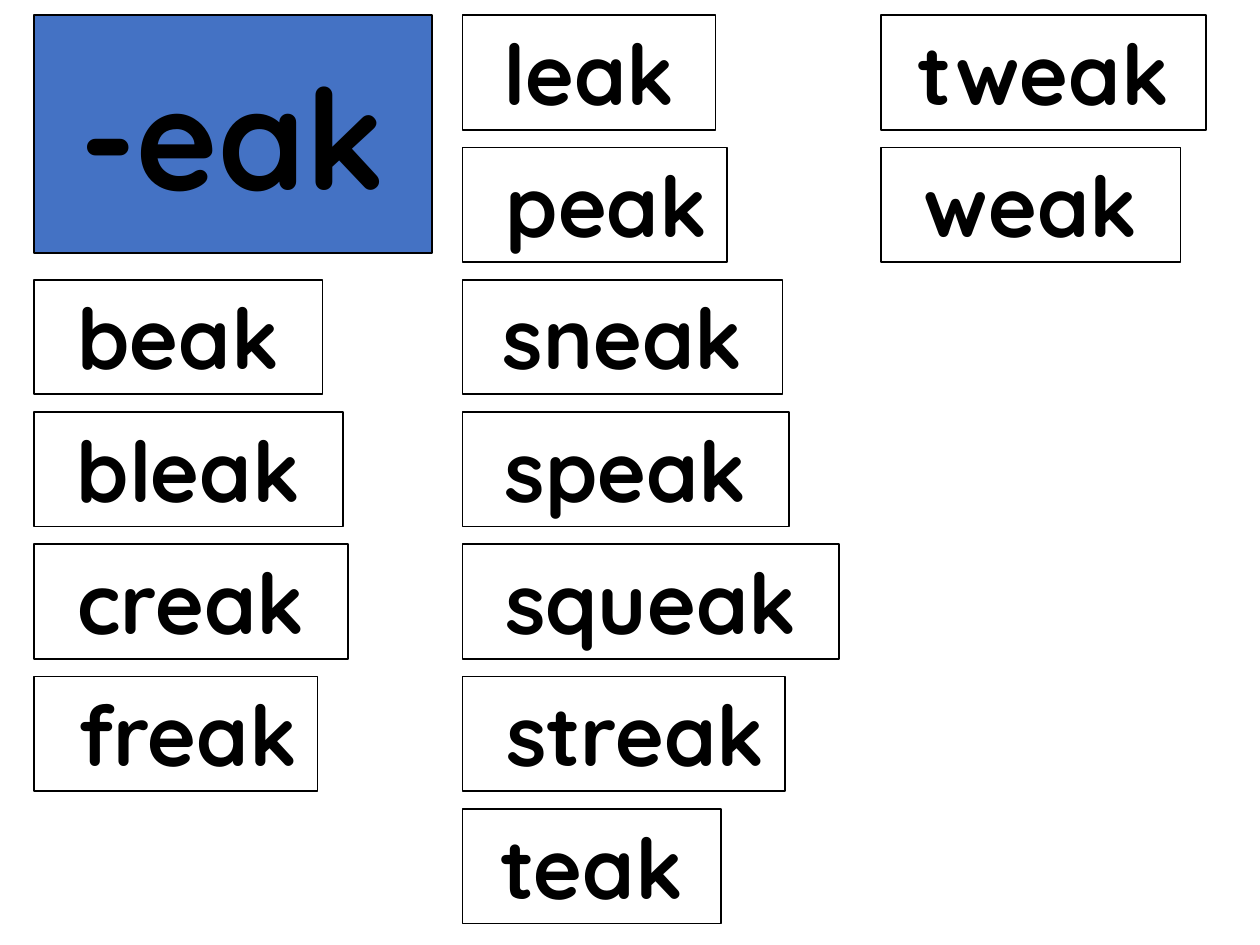
from pptx import Presentation
from pptx.dml.color import RGBColor
from pptx.enum.shapes import MSO_SHAPE
from pptx.enum.text import MSO_ANCHOR, MSO_AUTO_SIZE, PP_ALIGN
from pptx.util import Inches, Pt

TOP = 0.12
ROW_STEP = 1.05
CARD_HEIGHT = 0.91
COLUMNS = [
    (6.99, 0, [(" tweak ", 2.58), (" weak ", 2.38)]),
    (3.67, 0, [(" leak ", 2.01), (" peak", 2.1), (" sneak ", 2.54),
               (" speak ", 2.59), (" squeak ", 2.99), (" streak ", 2.56),
               (" teak ", 2.05)]),
    (0.27, 2, [(" beak ", 2.29), (" bleak ", 2.45), (" creak ", 2.49),
               (" freak ", 2.25)]),
]


def color(value):
    return RGBColor.from_string(value)


def add_card(slide, box, text, size, fill):
    s = slide.shapes.add_shape(MSO_SHAPE.RECTANGLE, *map(Inches, box))
    s.shadow.inherit = False
    s.fill.solid()
    s.fill.fore_color.rgb = color(fill)
    s.line.color.rgb = color("000000")
    s.line.width = Pt(1)
    p = s.text_frame.paragraphs[0]
    p.text = text
    p.alignment = PP_ALIGN.CENTER
    p.font.name = "Quicksand"
    p.font.size = Pt(size)
    p.font.bold = True
    p.font.color.rgb = color("000000")
    return s.text_frame


def add_word_column(slide, left, top, words):
    for i, (word, width) in enumerate(words):
        box = (left, top + i * ROW_STEP, width, CARD_HEIGHT)
        tf = add_card(slide, box, word, 48, "FFFFFF")
        tf.word_wrap = False
        tf.auto_size = MSO_AUTO_SIZE.SHAPE_TO_FIT_TEXT
        tf.vertical_anchor = MSO_ANCHOR.TOP


def add_title_card(slide, box):
    tf = add_card(slide, box, "-eak", 80, "4472C4")
    tf.vertical_anchor = MSO_ANCHOR.MIDDLE


def main():
    prs = Presentation()
    prs.slide_width, prs.slide_height = Inches(10), Inches(7.5)
    slide = prs.slides.add_slide(prs.slide_layouts[6])
    for left, first_row, words in COLUMNS:
        add_word_column(slide, left, TOP + first_row * ROW_STEP, words)
    add_title_card(slide, (0.27, TOP, 3.16, 1.89))
    prs.save("out.pptx")


if __name__ == "__main__":
    main()
